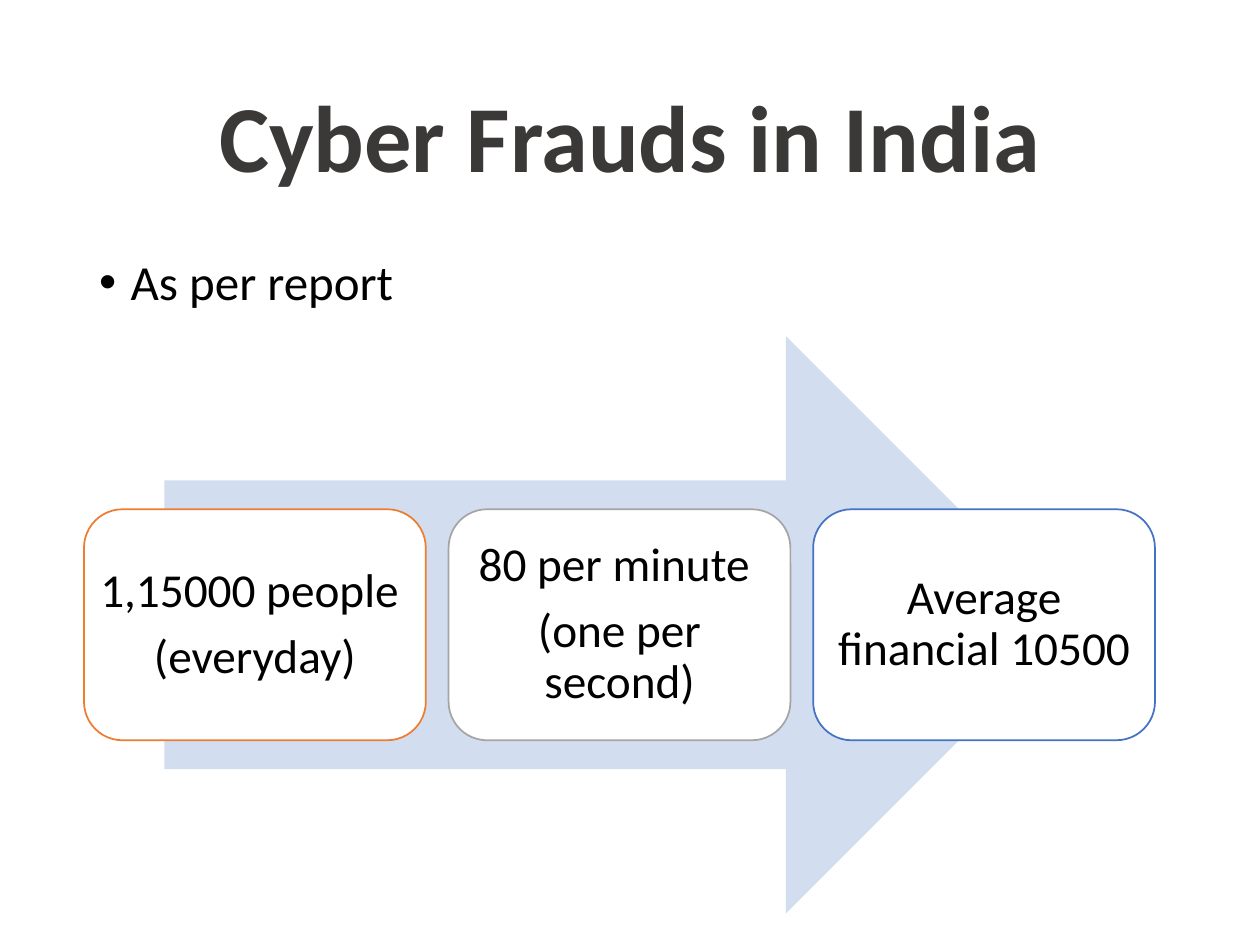
from pptx import Presentation
from pptx.util import Pt
from pptx.dml.color import RGBColor as RGB
from pptx.enum.shapes import MSO_SHAPE as Shape
from pptx.enum.text import MSO_ANCHOR as Anchor, MSO_AUTO_SIZE as Fit, PP_ALIGN as Align

FONT = "Calibri"
BLACK = RGB(0, 0, 0)
WHITE = RGB(0xFF, 0xFF, 0xFF)
GRAY = RGB(0x3B, 0x38, 0x38)
PALE = RGB(0xD2, 0xDE, 0xEF)
ORANGE = RGB(0xED, 0x7D, 0x31)
SILVER = RGB(0xA5, 0xA5, 0xA5)
BLUE = RGB(0x44, 0x72, 0xC4)

FACTS = [
    ("1,15000 people \n(everyday)", ORANGE),
    ("80 per minute \n(one per second)", SILVER),
    ("Average financial 10500", BLUE),
]


def place(part, box):
    part.left, part.top, part.width, part.height = [Pt(n) for n in box]


def write(frame, text, size, color, align, gap=0, bold=False):
    """Fill a frame; gap is the space before each paragraph after the first."""
    frame.text = text
    frame.word_wrap = True
    frame.auto_size = Fit.NONE
    for i, para in enumerate(frame.paragraphs):
        para.alignment = align
        para.line_spacing = 0.9
        para.space_before = Pt(gap if i else 0)
        for run in para.runs:
            font = run.font
            font.name, font.size, font.bold = FONT, Pt(size), bold
            font.color.rgb = color


def add_title(slide, box):
    title = slide.shapes.title
    place(title, box)
    write(title.text_frame, "Cyber Frauds in India", 54, GRAY, Align.CENTER, bold=True)
    title.text_frame.vertical_anchor = Anchor.MIDDLE


def add_list(slide, box):
    body = slide.placeholders[1]
    place(body, box)
    write(body.text_frame, "As per report", 28, BLACK, Align.LEFT)
    para = body.text_frame.paragraphs[0]
    para.space_before = Pt(10)
    # Hanging bullet
    props = para._p.get_or_add_pPr()
    props.set("marL", str(Pt(18)))
    props.set("indent", str(-Pt(18)))


def add_block(slide, kind, box, fill, line=None):
    block = slide.shapes.add_shape(kind, *[Pt(n) for n in box])
    block.shadow.inherit = False
    block.fill.solid()
    block.fill.fore_color.rgb = fill
    if line is None:
        block.line.fill.background()
    else:
        block.line.color.rgb = line
        block.line.width = Pt(1)
    return block


def add_flow(slide, box):
    left, top, width, height = box
    # Arrow behind the cards, inset at both ends
    span = width * 0.85
    add_block(slide, Shape.RIGHT_ARROW,
              (left + (width - span) / 2, top, span, height), PALE)
    # Equal cards across the middle
    gap = 13
    wide = (width - gap * (len(FACTS) - 1)) / len(FACTS)
    tall = height * 0.4
    for i, (text, color) in enumerate(FACTS):
        card = add_block(slide, Shape.ROUNDED_RECTANGLE,
                         (left + i * (wide + gap), top + (height - tall) / 2, wide, tall),
                         WHITE, color)
        frame = card.text_frame
        write(frame, text, 27, BLACK, Align.CENTER, gap=8.6)
        frame.vertical_anchor = Anchor.MIDDLE
        frame.margin_left = frame.margin_right = Pt(1.6)
        frame.margin_top = frame.margin_bottom = Pt(1.6)


def main():
    deck = Presentation()
    deck.slide_width, deck.slide_height = Pt(720), Pt(540)
    slide = deck.slides.add_slide(deck.slide_layouts[1])
    add_title(slide, (49.5, 28.75, 621, 104.4))
    add_list(slide, (49.5, 143.75, 621, 342.6))
    add_flow(slide, (48, 192, 612, 330))
    deck.save("out.pptx")


if __name__ == "__main__":
    main()
